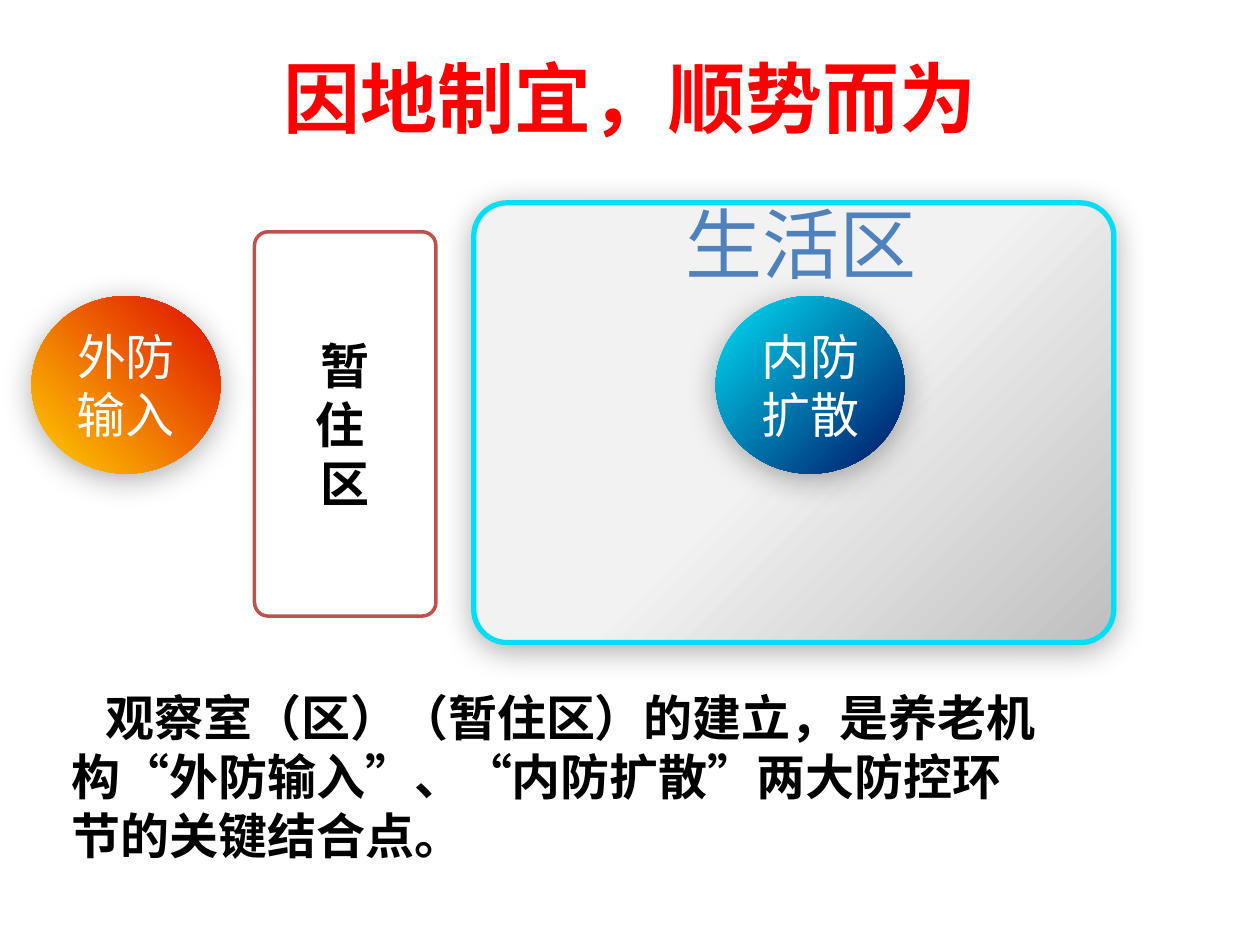
from dataclasses import dataclass

from lxml.etree import SubElement
from pptx import Presentation
from pptx.dml.color import RGBColor
from pptx.enum.shapes import MSO_SHAPE
from pptx.enum.text import MSO_ANCHOR, PP_ALIGN
from pptx.oxml.ns import qn
from pptx.util import Inches, Pt


@dataclass(frozen=True)
class Theme:
    red: str = "FF0000"
    black: str = "000000"
    white: str = "FFFFFF"
    blue: str = "4F81BD"
    brick: str = "C0504D"
    cyan: str = "00DFF6"
    navy: str = "002774"
    yellow: str = "FFCF01"
    orange: str = "E22000"
    pale: str = "F2F2F2"
    grey: str = "BFBFBF"
    large: int = 44
    normal: int = 28
    heading: str = "Calibri"
    body: str = "Arial"
    cjk: str = "Noto Sans CJK SC"


THEME = Theme()
WIDTH, HEIGHT = Inches(10), Inches(7.5)

# Each area is left, top, width, height in percent of the slide.
TITLE = ("因地制宜，顺势而为", (14.1, 1.87, 71.9, 16.67))
LIVING_AREA = (37.6, 21.47, 50.8, 46.53)
LIVING_LABEL = ("生活区", (53.4, 20.13, 23.2, 11.2))
STAY_AREA = (["暂", "住 ", "区"], (20.2, 24.53, 14.4, 40.67))
DEFENCES = [
    ("外防输入", 2.5, (THEME.yellow, THEME.orange), 45),
    ("内防扩散", 56.8, (THEME.cyan, THEME.navy), 315),
]
DEFENCE_TOP, DEFENCE_WIDTH, DEFENCE_HEIGHT = 31.33, 15, 18.8
SUMMARY = (
    "观察室（区）（暂住区）的建立，是养老机构“外防输入”、“内防扩散”两大防控环节的关键结合点。",
    (4.7, 72.13, 78.9, 20.13),
)


def place(area):
    sides = (WIDTH, HEIGHT, WIDTH, HEIGHT)
    return [round(side * share / 100) for side, share in zip(sides, area)]


def write(holder, lines, size, font, color, bold=False, align=PP_ALIGN.LEFT,
          anchor=MSO_ANCHOR.TOP):
    frame = holder.text_frame
    frame.word_wrap = True
    frame.vertical_anchor = anchor
    frame.text = "\n".join(lines)
    for paragraph in frame.paragraphs:
        paragraph.alignment = align
        paragraph.font.size = Pt(size)
        paragraph.font.name = font
        paragraph.font.bold = bold
        paragraph.font.color.rgb = RGBColor.from_string(color)


def add_panel(slide, kind, area):
    panel = slide.shapes.add_shape(kind, *place(area))
    panel.shadow.inherit = False
    panel.line.fill.background()
    if kind == MSO_SHAPE.ROUNDED_RECTANGLE:
        panel.adjustments[0] = 0.076
    return panel


def outline(panel, color, width):
    panel.line.color.rgb = RGBColor.from_string(color)
    panel.line.width = Pt(width)


def shade(panel, colors, positions, angle):
    panel.fill.gradient()
    panel.fill.gradient_angle = angle
    for stop, color, position in zip(panel.fill.gradient_stops, colors, positions):
        stop.color.rgb = RGBColor.from_string(color)
        stop.position = position


def cast_shadow(panel):
    effects = panel._element.spPr.find(qn("a:effectLst"))
    shadow = SubElement(effects, qn("a:outerShdw"), blurRad=str(Pt(17.8)),
                        dist=str(Pt(3)), dir=str(87 * 60000), rotWithShape="0")
    color = SubElement(shadow, qn("a:srgbClr"), val=THEME.black)
    SubElement(color, qn("a:alpha"), val="33000")


def main():
    deck = Presentation()
    deck.slide_width, deck.slide_height = WIDTH, HEIGHT
    slide = deck.slides.add_slide(deck.slide_layouts[5])
    centred = {"align": PP_ALIGN.CENTER, "anchor": MSO_ANCHOR.MIDDLE}

    heading, area = TITLE
    title = slide.shapes.title
    title.left, title.top, title.width, title.height = place(area)
    write(title, [heading], THEME.large, THEME.heading, THEME.red, True, **centred)

    living = add_panel(slide, MSO_SHAPE.ROUNDED_RECTANGLE, LIVING_AREA)
    shade(living, (THEME.pale, THEME.grey), (0.5, 1), 315)
    outline(living, THEME.cyan, 3)
    cast_shadow(living)

    for words, left, colors, angle in DEFENCES:
        defence = add_panel(slide, MSO_SHAPE.OVAL,
                            (left, DEFENCE_TOP, DEFENCE_WIDTH, DEFENCE_HEIGHT))
        shade(defence, colors, (0, 0.9), angle)
        cast_shadow(defence)
        write(defence, [words], THEME.normal, THEME.cjk, THEME.white, **centred)

    words, area = STAY_AREA
    stay = add_panel(slide, MSO_SHAPE.ROUNDED_RECTANGLE, area)
    stay.fill.solid()
    stay.fill.fore_color.rgb = RGBColor.from_string(THEME.white)
    outline(stay, THEME.brick, 2)
    write(stay, words, THEME.normal, THEME.heading, THEME.black, True, **centred)

    words, area = LIVING_LABEL
    label = slide.shapes.add_textbox(*place(area))
    write(label, [words], THEME.large, THEME.body, THEME.blue)

    words, area = SUMMARY
    summary = slide.shapes.add_textbox(*place(area))
    write(summary, [words], THEME.normal, THEME.body, THEME.black, True)
    first_line = summary.text_frame.paragraphs[0]._p.get_or_add_pPr()
    first_line.set("indent", str(Inches(0.27)))

    deck.save("out.pptx")


if __name__ == "__main__":
    main()
